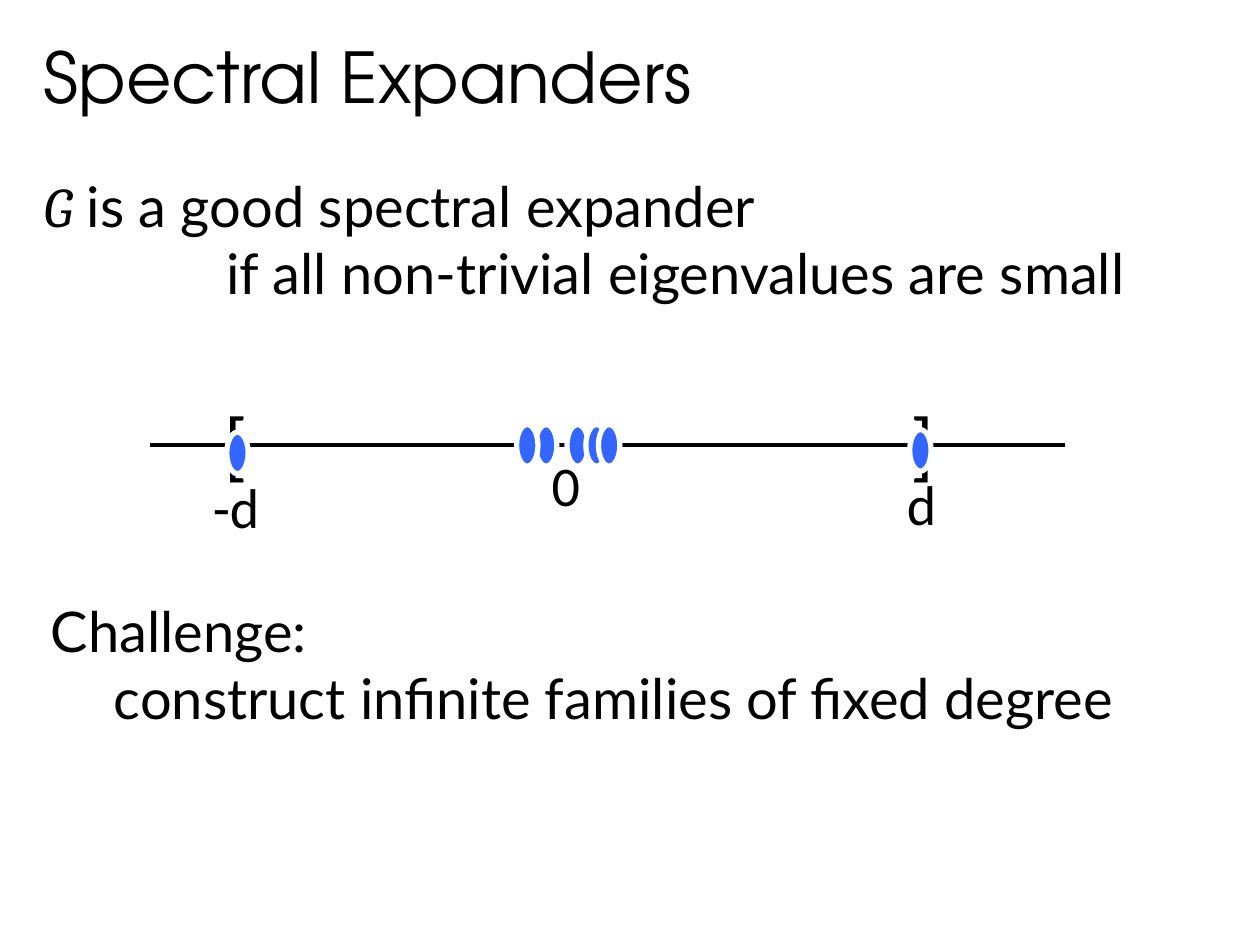
from dataclasses import dataclass

from pptx import Presentation
from pptx.dml.color import RGBColor
from pptx.enum.shapes import MSO_CONNECTOR, MSO_SHAPE
from pptx.enum.text import MSO_ANCHOR, PP_ALIGN
from pptx.oxml.ns import qn
from pptx.util import Inches, Pt


@dataclass(frozen=True)
class Theme:
    ink: RGBColor = RGBColor(0x00, 0x00, 0x00)
    paper: RGBColor = RGBColor(0xFF, 0xFF, 0xFF)
    eigenvalue: RGBColor = RGBColor(0x33, 0x66, 0xFF)
    title_font: str = "TeX Gyre Adventor"
    body_font: str = "Lato"
    label_font: str = "Calibri"
    math_font: str = "Cambria"
    title_size: Pt = Pt(40)
    body_size: Pt = Pt(32)
    bracket_size: Pt = Pt(44)
    axis_width: Pt = Pt(2.5)
    dot_outline: Pt = Pt(3)


THEME = Theme()
AXIS_Y = 3.53
DOT_WIDTH, DOT_HEIGHT = 0.17, 0.33


def style_font(font, name, size):
    font.name, font.size = name, size
    font.color.rgb = THEME.ink


def add_text(slide, box, lines, name, size, wrap=False):
    """Add a text box with one paragraph per line and return its paragraphs."""
    frame = slide.shapes.add_textbox(*map(Inches, box)).text_frame
    frame.word_wrap = wrap
    return fill_text(frame, lines, name, size)


def fill_text(frame, lines, name, size):
    frame.text = "\n".join(lines)
    for paragraph in frame.paragraphs:
        paragraph.alignment = PP_ALIGN.LEFT
        style_font(paragraph.font, name, size)
    return frame.paragraphs


def indent(paragraph, inches):
    properties = paragraph._p.get_or_add_pPr()
    properties.set("marL", str(Inches(inches)))
    properties.set("indent", "0")


def add_axis(slide, left, right):
    axis = slide.shapes.add_connector(
        MSO_CONNECTOR.STRAIGHT,
        Inches(left), Inches(AXIS_Y), Inches(right), Inches(AXIS_Y))
    axis.line.color.rgb = THEME.ink
    axis.line.width = THEME.axis_width
    properties = axis._element.spPr
    properties.append(properties.makeelement(qn("a:effectLst"), {}))


def add_eigenvalue(slide, left, top=3.37):
    dot = slide.shapes.add_shape(
        MSO_SHAPE.OVAL, Inches(left), Inches(top),
        Inches(DOT_WIDTH), Inches(DOT_HEIGHT))
    dot.shadow.inherit = False
    dot.fill.solid()
    dot.fill.fore_color.rgb = THEME.eigenvalue
    dot.line.color.rgb = THEME.paper
    dot.line.width = THEME.dot_outline


def add_challenge(slide):
    panel = slide.shapes.add_shape(
        MSO_SHAPE.ROUNDED_RECTANGLE,
        Inches(0.26), Inches(4.81), Inches(9.68), Inches(0.92))
    panel.shadow.inherit = False
    panel.fill.solid()
    panel.fill.fore_color.rgb = THEME.paper
    panel.line.fill.background()
    panel.text_frame.vertical_anchor = MSO_ANCHOR.MIDDLE
    _, task = fill_text(
        panel.text_frame,
        ["Challenge:", "construct infinite families of fixed degree"],
        THEME.body_font, THEME.body_size)
    indent(task, 0.5)


def add_definition(slide):
    subject, condition = add_text(
        slide, (0.25, 1.31, 9.17, 1.18),
        ["", "if all non-trivial eigenvalues are small"],
        THEME.body_font, THEME.body_size, wrap=True)
    graph = subject.add_run()
    graph.text = "G"
    graph.font.name, graph.font.italic = THEME.math_font, True
    subject.add_run().text = " is a good spectral expander"
    indent(condition, 1.45)


def main():
    presentation = Presentation()
    presentation.slide_width, presentation.slide_height = Inches(10), Inches(7.5)
    slide = presentation.slides.add_slide(presentation.slide_layouts[6])

    # Title
    add_text(slide, (0.25, 0.22, 5.55, 0.77), ["Spectral Expanders"],
             THEME.title_font, THEME.title_size)

    # Number line with the non-trivial eigenvalues near zero
    add_axis(slide, 1.19, 8.45)
    for left in (4.25, 4.1, 4.5, 4.65, 4.75):
        add_eigenvalue(slide, left)

    # Interval brackets and labels
    for bracket, left in (("[", 1.68), ("]", 7.13)):
        add_text(slide, (left, 3.09, 0.39, 0.84), [bracket],
                 THEME.label_font, THEME.bracket_size)
    for label, left, top, width in (("0", 4.28, 3.53, 0.43),
                                    ("-d", 1.59, 3.7, 0.58),
                                    ("d", 7.1, 3.68, 0.44)):
        add_text(slide, (left, top, width, 0.64), [label],
                 THEME.label_font, THEME.body_size)

    # Statements
    add_challenge(slide)
    add_definition(slide)

    # Trivial eigenvalues at the ends of the interval
    add_eigenvalue(slide, 7.22, 3.41)
    add_eigenvalue(slide, 1.8, 3.43)

    presentation.save("out.pptx")


if __name__ == "__main__":
    main()
